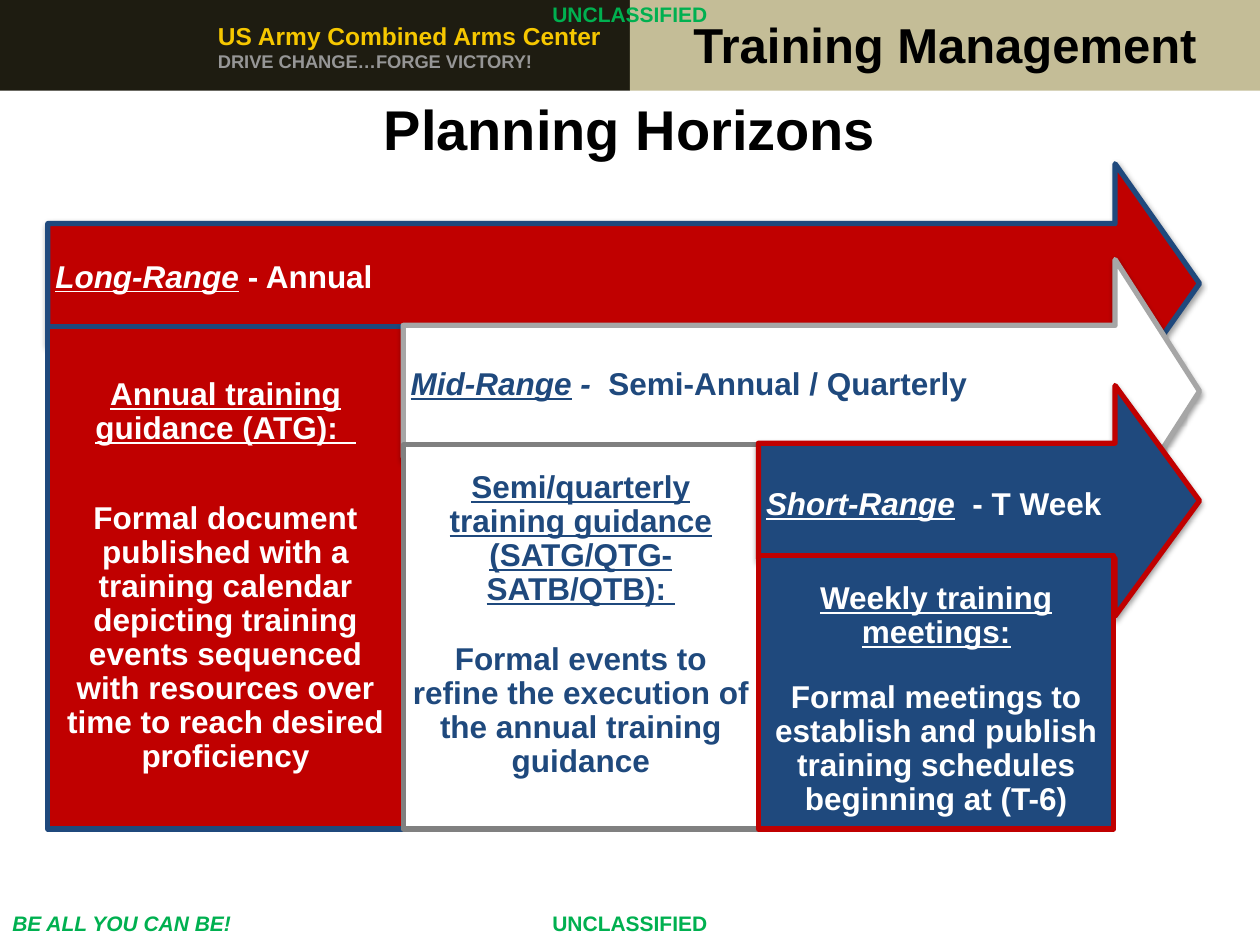
from lxml import etree
from pptx import Presentation
from pptx.dml.color import RGBColor
from pptx.enum.shapes import MSO_SHAPE
from pptx.enum.text import MSO_ANCHOR, PP_ALIGN
from pptx.util import Inches, Pt

RECT = MSO_SHAPE.RECTANGLE
TOP, MID = MSO_ANCHOR.TOP, MSO_ANCHOR.MIDDLE
LEFT, MIDST = PP_ALIGN.LEFT, PP_ALIGN.CENTER
WIDE, HIGH = 10, 7.5
EDGE, STEP, NECK, BASE = 0.38, 2.82, 8.85, 6.58
RED, BLUE, WHITE, GREEN, BLACK = "C00000", "1F497D", "FFFFFF", "00B050", "000000"
NS = "http://schemas.openxmlformats.org/drawingml/2006/main"
SHADE = (
    f'<a:effectLst xmlns:a="{NS}"><a:outerShdw blurRad="39370" dist="20320" '
    'dir="5400000" rotWithShape="0"><a:srgbClr val="000000">'
    '<a:alpha val="38000"/></a:srgbClr></a:outerShdw></a:effectLst>'
)
PAD = (0.1, 0.05, 0.1, 0.05)
TIGHT = (0.02, 0.02, 0.02, 0.02)

PLANS = [
    dict(top=1.3, high=1.9, body=2.59, fill=RED, ink=WHITE, lines=(BLUE, BLUE),
         name="Long-Range", link="", when=" - Annual", drop=0, lead=0.36, gap=32,
         head="Annual training guidance (ATG):  ",
         text="Formal document published with a training calendar depicting "
              "training events sequenced with resources over time to reach "
              "desired proficiency"),
    dict(top=2.06, high=2.09, body=3.53, fill=WHITE, ink=BLUE,
         lines=("A6A6A6", "808080"),
         name="Mid-Range", link=" - ", when=" Semi-Annual / Quarterly",
         drop=0, lead=0.16, gap=20.6,
         head="Semi/quarterly training guidance (SATG/QTG- SATB/QTB): ",
         text="Formal events to refine the execution of the annual training "
              "guidance"),
    dict(top=3.06, high=1.83, body=4.41, fill=BLUE, ink=WHITE, lines=(RED, RED),
         name="Short-Range", link="", when="  - T Week", drop=0.16, lead=0.16,
         gap=17.7, head="Weekly training meetings:",
         text="Formal meetings to establish and publish training schedules "
              "beginning at (T-6)"),
]


def tint(code):
    """Turn a hex string into a colour."""
    return RGBColor.from_string(code)


def paint(shape, fill, line=None):
    """Give a shape a flat fill and an optional outline."""
    shape.shadow.inherit = False
    shape.fill.solid()
    shape.fill.fore_color.rgb = tint(fill)
    if line:
        shape.line.color.rgb = tint(line)
        shape.line.width = Pt(3)
    else:
        shape.line.fill.background()


def block(slide, box, fill, line=None):
    """Place a filled rectangle."""
    shape = slide.shapes.add_shape(RECT, *map(Inches, box))
    paint(shape, fill, line)
    return shape


def frame(shape, pad, anchor):
    """Set up wrapping, margins and anchor, and return the text frame."""
    tf = shape.text_frame
    tf.word_wrap = True
    tf.vertical_anchor = anchor
    tf.margin_left, tf.margin_top, tf.margin_right, tf.margin_bottom = map(Inches, pad)
    return tf


def style(para, size, ink, align=LEFT, italic=None):
    """Set the bold font and alignment of a paragraph."""
    para.alignment = align
    font = para.font
    font.name, font.size, font.bold, font.italic = "Arial", Pt(size), True, italic
    font.color.rgb = tint(ink)


def label(slide, box, lines, align=MIDST, pad=PAD, anchor=MID, italic=None):
    """Place a text box with one (text, size, colour) per line."""
    tf = frame(slide.shapes.add_textbox(*map(Inches, box)), pad, anchor)
    for i, (text, size, ink) in enumerate(lines):
        para = tf.add_paragraph() if i else tf.paragraphs[0]
        para.text = text
        style(para, size, ink, align, italic)


def banner(slide, box):
    """Draw the two-tone header with its motto and topic."""
    x, y, w, h = box
    half = w / 2
    block(slide, (x, y, half, h), "1E1C11")
    block(slide, (x + half, y, half, h), "C4BD97")
    label(slide, (x + 1.13, y + 0.02, 3.77, h - 0.02),
          [("US Army Combined Arms Center", 14, "F6C700"),
           ("DRIVE CHANGE…FORGE VICTORY!", 10.5, "969696")],
          LEFT, (0.6, 0.02, 0.04, 0.02))
    label(slide, (x + half, y, half, h - 0.02),
          [("Training Management", 28, BLACK)], pad=TIGHT)


def marks(slide, wide, high):
    """Place the markings at the top and foot of the slide."""
    label(slide, (0, high - 0.32, 2.34, 0.3), [("BE ALL YOU CAN BE!", 12, GREEN)],
          LEFT, anchor=TOP, italic=True)
    for y in (0.01, high - 0.27):
        label(slide, ((wide - 1.5) / 2, y, 1.5, 0.2), [("UNCLASSIFIED", 12, GREEN)])


def arrow(slide, box, plan):
    """Draw a horizon arrow with its range and period."""
    x, y, w, h = box
    neck, tip = x + w - 0.67, x + w
    dots = [(x, 0.25), (neck, 0.25), (neck, 0), (tip, 0.5),
            (neck, 1), (neck, 0.75), (x, 0.75)]
    pts = [(Inches(px), Inches(y + h * part)) for px, part in dots]
    pen = slide.shapes.build_freeform(*pts[0])
    pen.add_line_segments(pts[1:], close=True)
    shape = pen.convert_to_shape()
    paint(shape, plan["fill"], plan["lines"][0])
    props = shape.element.spPr
    props.replace(props.find(f"{{{NS}}}effectLst"), etree.fromstring(SHADE))
    para = frame(shape, (0.06, 0.3 + plan["drop"], 0.44, 0.39), MID).paragraphs[0]
    style(para, 18, plan["ink"])
    para.line_spacing, para.space_after = 0.9, Pt(6.3)
    for key, slant, under in (("name", True, True), ("link", True, False),
                              ("when", False, False)):
        if plan[key]:
            run = para.add_run()
            run.text = plan[key]
            run.font.italic, run.font.underline = slant, under


def panel(slide, box, plan):
    """Draw the box that explains a horizon."""
    shape = block(slide, box, plan["fill"], plan["lines"][1])
    tf = frame(shape, (0.05, 0.05 + plan["lead"], 0.05, 0.05), TOP)
    rows = (("head", True, plan["gap"]), ("text", False, 6.3))
    for para, (key, under, gap) in zip((tf.paragraphs[0], tf.add_paragraph()), rows):
        para.text = plan[key]
        style(para, 18, plan["ink"], MIDST)
        para.font.underline = under
        para.line_spacing, para.space_after = 0.9, Pt(gap)


def main():
    """Build the slide and save it."""
    deck = Presentation()
    deck.slide_width, deck.slide_height = Inches(WIDE), Inches(HIGH)
    slide = deck.slides.add_slide(deck.slide_layouts[6])
    banner(slide, (0, 0, WIDE, 0.72))
    marks(slide, WIDE, HIGH)
    label(slide, (0, 0.72, WIDE, 0.6), [("Planning Horizons", 32, BLACK)],
          pad=(0.06, 0.03, 0.06, 0.03))
    for i, plan in enumerate(PLANS):
        x = EDGE + i * STEP
        arrow(slide, (x, plan["top"], NECK + 0.67 - x, plan["high"]), plan)
        panel(slide, (x, plan["body"], STEP, BASE - plan["body"]), plan)
    deck.save("out.pptx")


if __name__ == "__main__":
    main()
